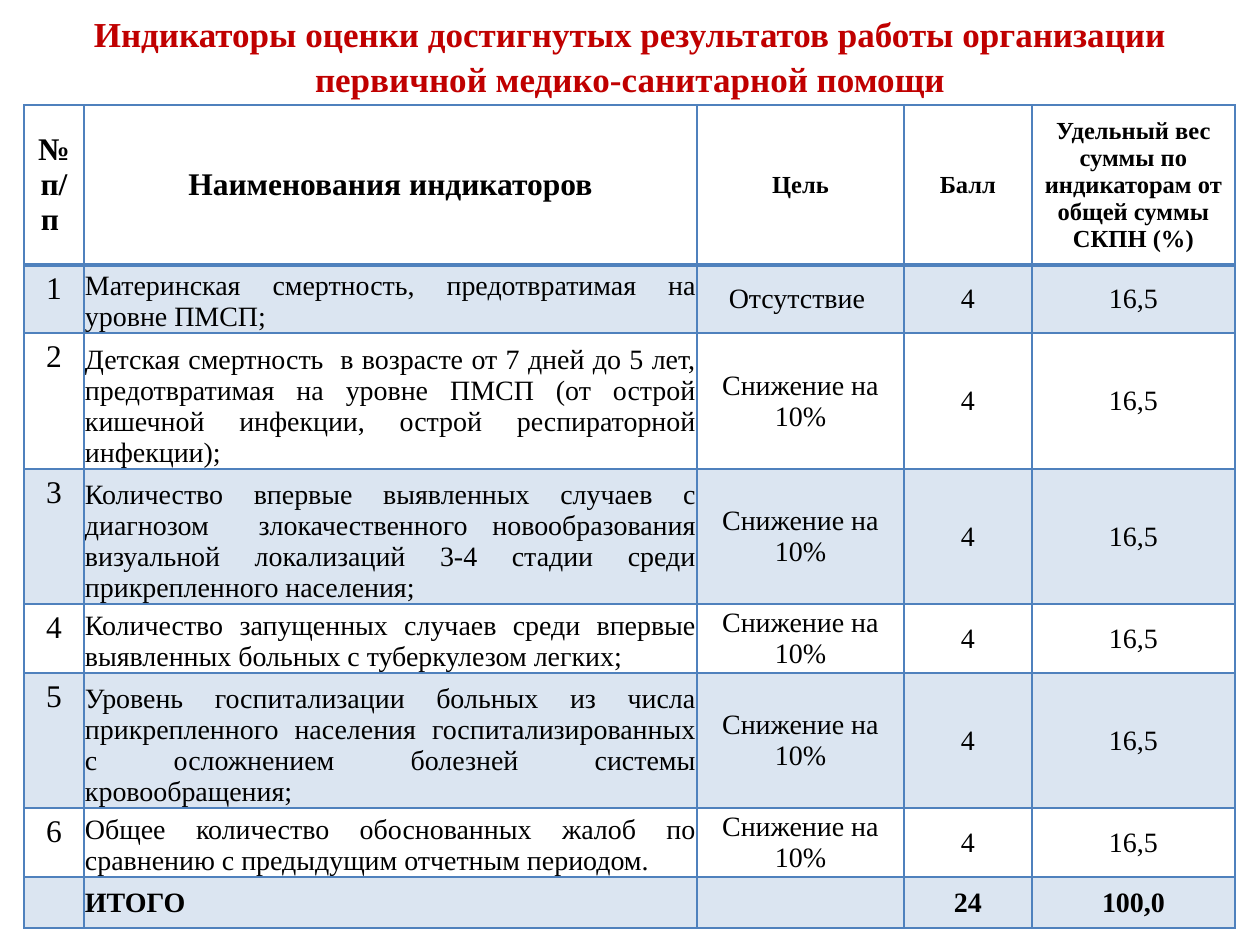
import pptx
import pptx.dml.color
import pptx.enum.text
import pptx.util
from lxml import etree
from pptx.oxml.ns import qn

PX = 914400 / 126
FONT = "Times New Roman"
ACCENT = "4F81BD"
ALIGN = pptx.enum.text.PP_ALIGN
ANCHOR = pptx.enum.text.MSO_ANCHOR

TITLE = ("Индикаторы оценки достигнутых результатов работы организации "
         "первичной медико-санитарной помощи")
HEADINGS = ["№ п/п ", "Наименования индикаторов", "Цель", "Балл",
            "Удельный вес суммы по индикаторам от общей суммы СКПН (%)"]
REDUCTION = "Снижение на 10%"
INDICATORS = [
    ("Материнская смертность, предотвратимая на уровне ПМСП;", "Отсутствие "),
    ("Детская смертность  в возрасте от 7 дней до 5 лет, предотвратимая на уровне "
     "ПМСП (от острой кишечной инфекции, острой респираторной инфекции);", REDUCTION),
    ("Количество впервые выявленных случаев с диагнозом  злокачественного "
     "новообразования визуальной локализаций 3-4 стадии среди прикрепленного "
     "населения;", REDUCTION),
    ("Количество запущенных случаев среди впервые выявленных больных с "
     "туберкулезом легких;", REDUCTION),
    ("Уровень госпитализации больных из числа прикрепленного населения "
     "госпитализированных с осложнением болезней системы кровообращения;", REDUCTION),
    ("Общее количество обоснованных жалоб по сравнению с предыдущим отчетным "
     "периодом. ", REDUCTION),
]
TOTALS = ["", "ИТОГО", "", "24", "100,0"]
COLUMN_WIDTHS = [60, 613, 207, 128, 203]
ROW_HEIGHTS = [160, 68, 136, 135, 69, 135, 69, 51]


def px(length):
    return pptx.util.Emu(round(length * PX))


def color(hex_string):
    return pptx.dml.color.RGBColor.from_string(hex_string)


def write(paragraph, text, size, bold=False, ink="000000", align=ALIGN.CENTER):
    paragraph.alignment = align
    run = paragraph.add_run()
    run.text = text
    run.font.name = FONT
    run.font.size = pptx.util.Pt(size)
    run.font.bold = bold
    run.font.color.rgb = color(ink)


def add_title(slide, left, top, width, height):
    title = slide.shapes.title
    title.left, title.top, title.width, title.height = map(px, (left, top, width, height))
    frame = title.text_frame
    frame.word_wrap = True
    frame.vertical_anchor = ANCHOR.MIDDLE
    heading = frame.paragraphs[0]
    heading.line_spacing = 1.08
    write(heading, TITLE, 20, True, "C00000")


def set_borders(cell, top_width, bottom_width):
    properties = cell._tc.get_or_add_tcPr()
    widths = {"a:lnL": 1, "a:lnR": 1, "a:lnT": top_width, "a:lnB": bottom_width}
    for side, width in widths.items():
        line = etree.SubElement(properties, qn(side), w=str(pptx.util.Pt(width)))
        fill = etree.SubElement(line, qn("a:solidFill"))
        etree.SubElement(fill, qn("a:srgbClr"), val=ACCENT)


def set_band(cell, shaded):
    """Tint a shaded cell with the accent at 20 % opacity; clear any other."""
    if not shaded:
        cell.fill.background()
        return
    cell.fill.solid()
    cell.fill.fore_color.rgb = color(ACCENT)
    tint = cell._tc.tcPr.find(qn("a:solidFill")).find(qn("a:srgbClr"))
    etree.SubElement(tint, qn("a:alpha"), val="20000")


def fill_cell(cell, text, row, column):
    header, total = row == 0, row == len(ROW_HEIGHTS) - 1
    number, name = column == 0, column == 1
    set_borders(cell, 2 if row == 1 else 1, 2 if header else 1)
    set_band(cell, row % 2 == 1)
    cell.vertical_anchor = ANCHOR.MIDDLE
    size, align = 16, ALIGN.CENTER
    if header:
        size = 18 if column < 2 else 14
    elif number:
        size = 18
        cell.vertical_anchor = ANCHOR.TOP
    else:
        cell.margin_left = cell.margin_right = cell.margin_top = px(1)
        cell.margin_bottom = 0
        if name:
            align = ALIGN.LEFT if total else ALIGN.JUSTIFY
            cell.vertical_anchor = ANCHOR.MIDDLE if total else ANCHOR.BOTTOM
    if text:
        write(cell.text_frame.paragraphs[0], text, size, header or total, align=align)


def add_indicator_table(slide, left, top):
    rows = [HEADINGS]
    rows += [[str(number), name, goal, "4", "16,5"]
             for number, (name, goal) in enumerate(INDICATORS, 1)]
    rows.append(TOTALS)
    table = slide.shapes.add_table(
        len(rows), len(HEADINGS), px(left), px(top),
        px(sum(COLUMN_WIDTHS)), px(sum(ROW_HEIGHTS))).table
    table.first_row = table.horz_banding = False
    for column, width in zip(table.columns, COLUMN_WIDTHS):
        column.width = px(width)
    for row, height in zip(table.rows, ROW_HEIGHTS):
        row.height = px(height)
    for row, texts in enumerate(rows):
        for column, text in enumerate(texts):
            fill_cell(table.cell(row, column), text, row, column)


def main():
    deck = pptx.Presentation()
    deck.slide_width, deck.slide_height = px(1260), px(945)
    slide = deck.slides.add_slide(deck.slide_layouts[5])
    add_title(slide, 5, 6, 1250, 97)
    add_indicator_table(slide, 24, 105)
    deck.save("out.pptx")


if __name__ == "__main__":
    main()
